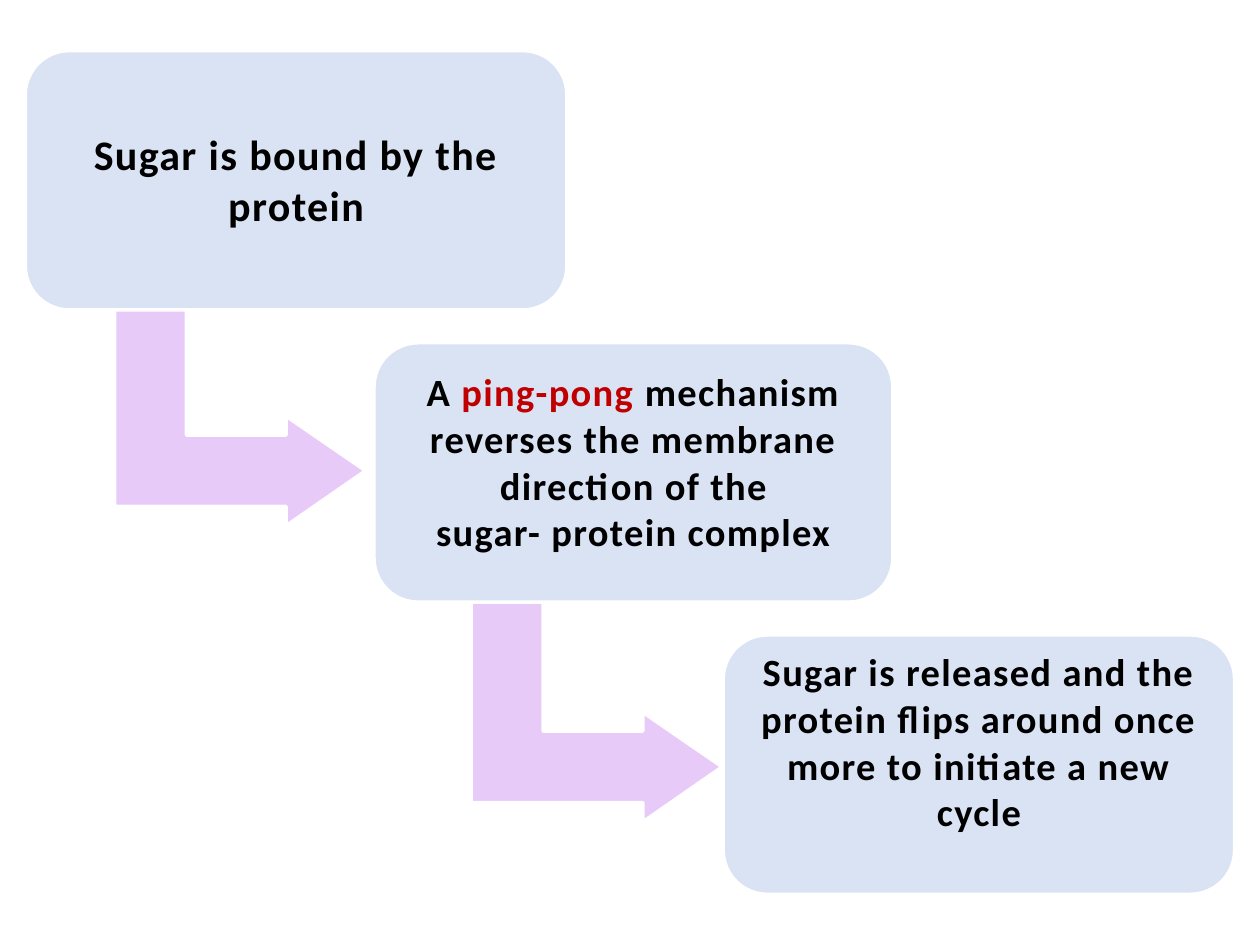
"""Build a slide of three descending steps of sugar transport, joined by bent arrows."""
import pptx
import pptx.dml.color
import pptx.enum.shapes
import pptx.enum.text
import pptx.util
from pptx.util import Cm

COLORS = {
    "step": "DAE3F3",
    "arrow": "E7CAF8",
    "outline": "FFFFFF",
    "text": "000000",
    "emphasis": "C00000",
}
STEP_HEIGHT = 5.23
STEP_TOP = 1.02
STEP_DROP = 5.89
BENT_ARROW = [(0, 0), (1.45, 0), (1.45, 2.62), (3.46, 2.62), (3.46, 2.24),
              (5.06, 3.34), (3.46, 4.45), (3.46, 4.06), (0, 4.06)]
STEPS = [
    {"left": 0.51, "width": 10.92, "inset": 1.32, "size": 24, "spacing": 1,
     "paragraphs": [[("Sugar is bound by the protein", "text")]]},
    {"left": 7.54, "width": 10.46, "inset": 0.25, "size": 22, "spacing": 1.01,
     "paragraphs": [
         [("A ", "text"), ("ping-pong ", "emphasis"),
          ("mechanism reverses the membrane direction of the", "text")],
         [("sugar- protein complex", "text")]]},
    {"left": 14.58, "width": 10.31, "inset": 0, "size": 22, "spacing": 1.01,
     "paragraphs": [[("Sugar is released and the protein flips around once "
                      "more to initiate a new cycle", "text")]]},
]
ARROWS = [(2.31, 6.15), (9.5, 12.12)]


def rgb(name):
    return pptx.dml.color.RGBColor.from_string(COLORS[name])


def paint(shape, fill):
    shape.shadow.inherit = False
    shape.fill.solid()
    shape.fill.fore_color.rgb = rgb(fill)
    shape.line.color.rgb = rgb("outline")
    shape.line.width = pptx.util.Pt(2)


def add_bent_arrow(slide, left, top):
    corners = [(Cm(left + x), Cm(top + y)) for x, y in BENT_ARROW]
    builder = slide.shapes.build_freeform(*corners[0])
    builder.add_line_segments(corners[1:], close=True)
    paint(builder.convert_to_shape(), "arrow")


def write_paragraph(paragraph, pieces, size, spacing):
    paragraph.alignment = pptx.enum.text.PP_ALIGN.CENTER
    paragraph.line_spacing = spacing
    paragraph.font.name = "Calibri"
    paragraph.font.size = pptx.util.Pt(size)
    paragraph.font.bold = True
    for words, color in pieces:
        run = paragraph.add_run()
        run.text = words
        run.font.color.rgb = rgb(color)
        run.font._element.set("spc", "80")


def add_step(slide, step, top):
    box = slide.shapes.add_shape(
        pptx.enum.shapes.MSO_SHAPE.ROUNDED_RECTANGLE,
        Cm(step["left"]), Cm(top), Cm(step["width"]), Cm(STEP_HEIGHT))
    box.adjustments[0] = 0.17
    paint(box, "step")
    frame = box.text_frame
    frame.word_wrap = True
    frame.vertical_anchor = pptx.enum.text.MSO_ANCHOR.TOP
    frame.margin_left = frame.margin_right = Cm(0.25)
    frame.margin_top, frame.margin_bottom = Cm(step["inset"]), 0
    for index, pieces in enumerate(step["paragraphs"]):
        paragraph = frame.add_paragraph() if index else frame.paragraphs[0]
        write_paragraph(paragraph, pieces, step["size"], step["spacing"])


def main():
    deck = pptx.Presentation()
    deck.slide_width, deck.slide_height = Cm(25.4), Cm(19.05)
    slide = deck.slides.add_slide(deck.slide_layouts[6])
    for left, top in ARROWS:
        add_bent_arrow(slide, left, top)
    for index, step in enumerate(STEPS):
        add_step(slide, step, STEP_TOP + index * STEP_DROP)
    deck.save("out.pptx")


if __name__ == "__main__":
    main()
